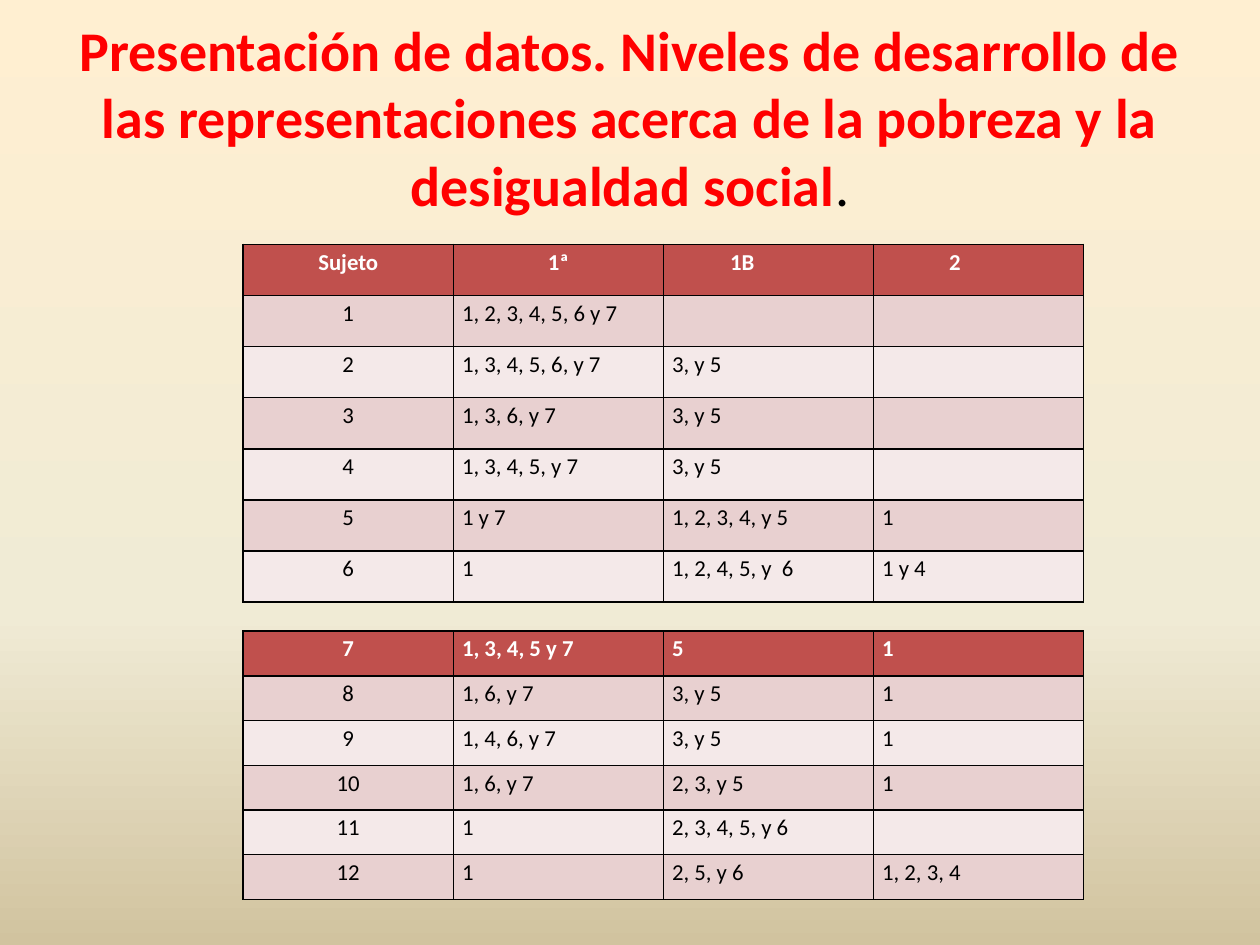
from lxml import etree
from pptx import Presentation
from pptx.dml.color import RGBColor
from pptx.enum.text import MSO_ANCHOR as Anchor, PP_ALIGN as Align
from pptx.oxml import parse_xml
from pptx.oxml.ns import nsdecls, qn
from pptx.util import Inches, Pt

COLORS = {
    "title": "FF0000",
    "text": "000000",
    "header_text": "FFFFFF",
    "header": "C0504D",
    "odd_row": "E8D0D0",
    "even_row": "F4E9E9",
    "border": "000000",
}
BACKGROUND_STOPS = {0: "FFEFD1", 65: "F0EBD5", 100: "D1C39F"}
FONT = "Calibri"
CELL_FORMAT = {"margin_left": Inches(0.07), "margin_right": Inches(0.07),
               "margin_top": 0, "margin_bottom": 0}
PARAGRAPH_FORMAT = {"line_spacing": 1.15, "space_after": Pt(10)}
HEADER_INDENTS = {"1B": Inches(0.53), "2": Inches(0.6)}

FIRST_ROWS = [
    ["Sujeto", "1ª", "1B", "2"],
    ["1", "1, 2, 3, 4, 5, 6 y 7", "", ""],
    ["2", "1, 3, 4, 5, 6, y 7", "3, y 5", ""],
    ["3", "1, 3, 6, y 7", "3, y 5", ""],
    ["4", "1, 3, 4, 5, y 7", "3, y 5", ""],
    ["5", "1 y 7", "1, 2, 3, 4, y 5", "1"],
    ["6", "1", "1, 2, 4, 5, y  6", "1 y 4"],
]
SECOND_ROWS = [
    ["7", "1, 3, 4, 5 y 7", "5", "1"],
    ["8", "1, 6, y 7", "3, y 5", "1"],
    ["9", "1, 4, 6, y 7", "3, y 5", "1"],
    ["10", "1, 6, y 7", "2, 3, y 5", "1"],
    ["11", "1", "2, 3, 4, 5, y 6", ""],
    ["12", "1", "2, 5, y 6", "1, 2, 3, 4"],
]


def set_format(target, values):
    for name, value in values.items():
        setattr(target, name, value)


def add_run(paragraph, text, size, color, bold):
    run = paragraph.add_run()
    run.text = text
    set_format(run.font, {"name": FONT, "size": Pt(size), "bold": bold})
    run.font.color.rgb = RGBColor.from_string(COLORS[color])


def set_background(slide):
    stops = "".join(
        f'<a:gs pos="{position * 1000}"><a:srgbClr val="{color}"/></a:gs>'
        for position, color in BACKGROUND_STOPS.items())
    background = parse_xml(
        f'<p:bg {nsdecls("p", "a")}><p:bgPr><a:gradFill rotWithShape="1">'
        f'<a:gsLst>{stops}</a:gsLst><a:lin ang="5400000" scaled="0"/>'
        '</a:gradFill><a:effectLst/></p:bgPr></p:bg>')
    slide.element.cSld.insert(0, background)


def set_borders(cell):
    properties = cell._tc.get_or_add_tcPr()
    for index, side in enumerate(("lnL", "lnR", "lnT", "lnB")):
        line = etree.Element(qn(f"a:{side}"), w=str(Pt(1)))
        fill = etree.SubElement(line, qn("a:solidFill"))
        etree.SubElement(fill, qn("a:srgbClr"), val=COLORS["border"])
        properties.insert(index, line)


def add_title(slide, left, top, width, height):
    frame = slide.shapes.add_textbox(left, top, width, height).text_frame
    set_format(frame, {"word_wrap": True, "vertical_anchor": Anchor.MIDDLE})
    paragraph = frame.paragraphs[0]
    paragraph.alignment = Align.CENTER
    add_run(paragraph, "Presentación de datos. Niveles de desarrollo de las "
            "representaciones acerca de la pobreza y la desigualdad social",
            32, "title", True)
    add_run(paragraph, ".", 32, "text", False)


def fill_cell(cell, text, is_header, is_centered, fill):
    set_format(cell, CELL_FORMAT)
    cell.fill.solid()
    cell.fill.fore_color.rgb = RGBColor.from_string(COLORS[fill])
    set_borders(cell)
    if text:
        paragraph = cell.text_frame.paragraphs[0]
        set_format(paragraph, PARAGRAPH_FORMAT)
        paragraph.alignment = Align.CENTER if is_centered else Align.LEFT
        add_run(paragraph, text, 13,
                "header_text" if is_header else "text", is_header)


def add_levels_table(slide, rows, left, top, width, height):
    table = slide.shapes.add_table(
        len(rows), len(rows[0]), left, top, width, height).table
    for row_index, row in enumerate(rows):
        is_header = row_index == 0
        band = "odd_row" if row_index % 2 else "even_row"
        for column_index, text in enumerate(row):
            cell = table.cell(row_index, column_index)
            is_centered = column_index == 0 or text == "1ª"
            fill_cell(cell, text, is_header, is_centered,
                      "header" if is_header else band)
    return table


def main():
    presentation = Presentation()
    set_format(presentation, {"slide_width": Inches(10),
                              "slide_height": Inches(7.5)})
    slide = presentation.slides.add_slide(presentation.slide_layouts[6])
    set_background(slide)
    add_title(slide, Inches(0.5), Inches(0.3), Inches(9), Inches(1.25))
    left, width = Inches(1.93), Inches(6.67)
    first_table = add_levels_table(
        slide, FIRST_ROWS, left, Inches(1.94), width, Inches(2.84))
    for cell in first_table.rows[0].cells:
        cell.margin_left = HEADER_INDENTS.get(cell.text, cell.margin_left)
    add_levels_table(
        slide, SECOND_ROWS, left, Inches(5.01), width, Inches(2.13))
    presentation.save("out.pptx")


if __name__ == "__main__":
    main()
